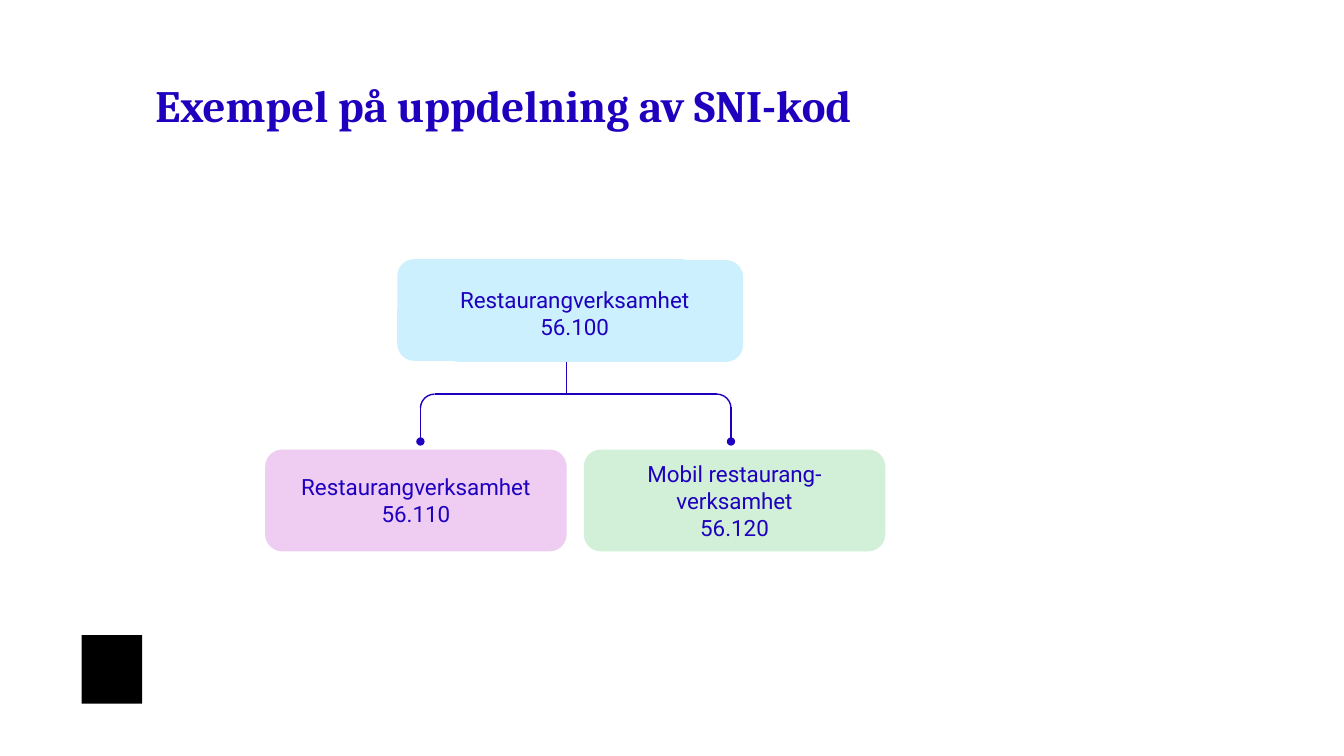
from lxml.etree import SubElement
from pptx import Presentation
from pptx.dml.color import RGBColor
from pptx.enum.shapes import MSO_CONNECTOR, MSO_SHAPE
from pptx.enum.text import MSO_ANCHOR, PP_ALIGN
from pptx.oxml.ns import qn
from pptx.util import Pt

PX = 9144  # 100 px to the inch
INK = "1E00BE"
BOX_WIDTH, BOX_HEIGHT = 299, 101


def color(hex_string):
    return RGBColor.from_string(hex_string)


def write_lines(frame, lines, alignment, insets, **font_values):
    """Fill a text frame, one paragraph a line; insets are left, top, right, bottom."""
    frame.word_wrap = True
    for side, inset in zip(("left", "top", "right", "bottom"), insets):
        setattr(frame, f"margin_{side}", inset * PX)
    for number, line in enumerate(lines):
        paragraph = frame.add_paragraph() if number else frame.paragraphs[0]
        paragraph.alignment = alignment
        run = paragraph.add_run()
        run.text = line
        run.font.color.rgb = color(INK)
        for name, value in font_values.items():
            setattr(run.font, name, value)


presentation = Presentation()
presentation.slide_width, presentation.slide_height = 1333 * PX, 750 * PX
slide = presentation.slides.add_slide(presentation.slide_layouts[6])
shapes = slide.shapes

# Title
title = shapes.add_textbox(154 * PX, 77 * PX, 1029 * PX, 99 * PX)
write_lines(title.text_frame, ["Exempel på uppdelning av SNI-kod"], PP_ALIGN.LEFT,
            (0, 0, 0, 0), name="Cambria", size=Pt(32), bold=True)

# Branch lines: start, end, dot at the end
branch_lines = [
    ((562, 348), (562, 391), False),
    ((711, 391), (431, 391), False),
    ((417, 404), (417, 438), True),
    ((725, 404), (725, 438), True),
]
for start, end, has_dot in branch_lines:
    points = [value * PX for value in start + end]
    connector = shapes.add_connector(MSO_CONNECTOR.STRAIGHT, *points)
    connector.line.color.rgb = color(INK)
    connector.line.width = Pt(1)
    if has_dot:
        SubElement(connector.line._get_or_add_ln(), qn("a:tailEnd"), type="oval")
    SubElement(connector._element.spPr, qn("a:effectLst"))

# Rounded branch corners; angles are in units of 0.6 of a degree's sixtieth part x 100000
for left, start_angle, end_angle in [(417, 108, 162), (697, 162, 0)]:
    corner = shapes.add_shape(MSO_SHAPE.ARC, left * PX, 391 * PX, 28 * PX, 28 * PX)
    corner.adjustments[0] = start_angle
    corner.adjustments[1] = end_angle
    corner.shadow.inherit = False
    corner.fill.background()
    corner.line.color.rgb = color(INK)
    corner.line.width = Pt(1)

# Code boxes: the parent is two overlapping boxes, the front one with the text
child_insets = (28, 0, 28, 0)
boxes = [
    (394, 257, "CCF0FD", [], child_insets),
    (438, 258, "CCF0FD", ["Restaurangverksamhet", "56.100"], (11, 4, 46, 0)),
    (263, 446, "EFCDF2", ["Restaurangverksamhet", "56.110"], child_insets),
    (579, 446, "D1F0D7", ["Mobil restaurang-verksamhet", "56.120"], child_insets),
]
for left, top, fill, lines, insets in boxes:
    box = shapes.add_shape(MSO_SHAPE.ROUNDED_RECTANGLE, left * PX, top * PX,
                           BOX_WIDTH * PX, BOX_HEIGHT * PX)
    box.shadow.inherit = False
    box.fill.solid()
    box.fill.fore_color.rgb = color(fill)
    box.line.fill.background()
    box.text_frame.vertical_anchor = MSO_ANCHOR.MIDDLE
    write_lines(box.text_frame, lines, PP_ALIGN.CENTER, insets, name="Roboto", size=Pt(16))

# Plain emblem
emblem = shapes.add_shape(MSO_SHAPE.RECTANGLE, 81 * PX, 630 * PX, 60 * PX, 68 * PX)
emblem.shadow.inherit = False
emblem.fill.solid()
emblem.fill.fore_color.rgb = color("000000")
emblem.line.fill.background()

presentation.save("out.pptx")
